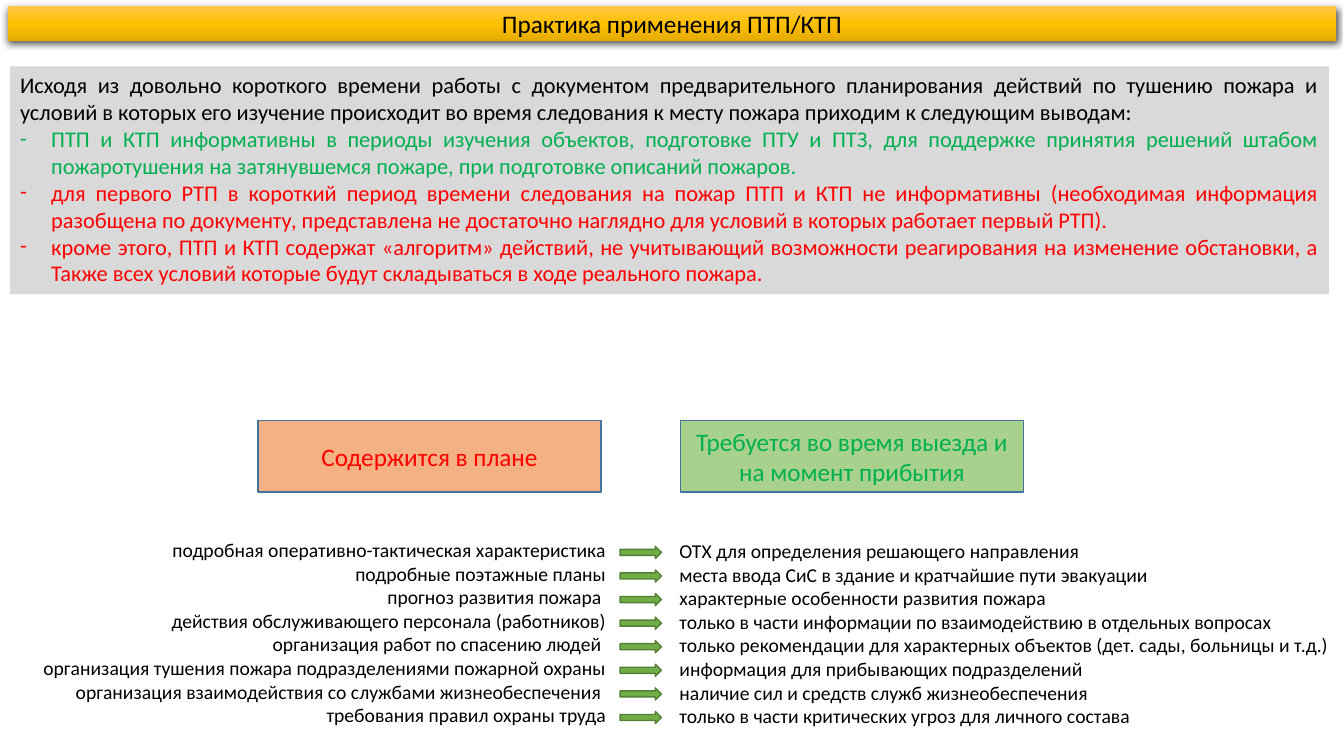
from pptx import Presentation
from pptx.dml.color import RGBColor
from pptx.enum.shapes import MSO_SHAPE
from pptx.enum.text import MSO_ANCHOR, MSO_AUTO_SIZE, PP_ALIGN
from pptx.oxml import parse_xml
from pptx.oxml.ns import nsdecls
from pptx.util import Inches, Pt

TITLE = "Практика применения ПТП/КТП"
INTRO = ("Исходя из довольно короткого времени работы с документом предварительного "
         "планирования действий по тушению пожара и условий в которых его изучение "
         "происходит во время следования к месту пожара приходим к следующим выводам: ")
POINTS = [
    ("good", "ПТП и КТП информативны в периоды изучения объектов, подготовке ПТУ и ПТЗ, "
             "для поддержке принятия решений штабом пожаротушения на затянувшемся пожаре, "
             "при подготовке описаний пожаров."),
    ("bad", "для первого РТП в короткий период времени следования на пожар ПТП и КТП не "
            "информативны (необходимая информация разобщена по документу, представлена не "
            "достаточно наглядно для условий в которых работает первый РТП)."),
    ("bad", "кроме этого, ПТП и КТП содержат «алгоритм» действий, не учитывающий "
            "возможности реагирования на изменение обстановки, а Также всех условий "
            "которые будут складываться в ходе реального пожара."),
]
HEADS = [
    ("Содержится в плане", 2.56, "peach", "bad"),
    ("Требуется во время выезда и на момент прибытия", 6.75, "mint", "good"),
]
PAIRS = [
    ("подробная оперативно-тактическая характеристика",
     "ОТХ для определения решающего направления"),
    ("подробные поэтажные планы",
     "места ввода СиС в здание и кратчайшие пути эвакуации"),
    ("прогноз развития пожара ",
     "характерные особенности развития пожара"),
    ("действия обслуживающего персонала (работников)",
     "только в части информации по взаимодействию в отдельных вопросах"),
    ("организация работ по спасению людей ",
     "только рекомендации для характерных объектов (дет. сады, больницы и т.д.)"),
    ("организация тушения пожара подразделениями пожарной охраны",
     "информация для прибывающих подразделений"),
    ("организация взаимодействия со службами жизнеобеспечения ",
     "наличие сил и средств служб жизнеобеспечения"),
    ("требования правил охраны труда",
     "только в части критических угроз для личного состава"),
]

THEME = {
    "font": "Calibri",
    "size": {"head": 18, "body": 16, "list": 14},
    "color": {"text": "000000", "good": "00B050", "bad": "FF0000", "panel": "D9D9D9",
              "peach": "F4B183", "mint": "A9D18E", "edge": "43739E",
              "arrow": "70AD47", "rim": "538035"},
    "bar": [(0, "FFC64B"), (50, "FFC000"), (100, "E3AB00")],
}
ARROW_TOP, ARROW_STEP = 5.42, 0.234


def tint(name):
    return RGBColor.from_string(THEME["color"][name])


def place(shape, box):
    for key, value in zip(("left", "top", "width", "height"), box):
        setattr(shape, key, Inches(value))


def write(shape, lines, size, align, anchor=MSO_ANCHOR.TOP):
    """Fill a shape with (colour name, text) paragraphs."""
    frame = shape.text_frame
    look = {"word_wrap": True, "auto_size": MSO_AUTO_SIZE.NONE,
            "vertical_anchor": anchor}
    for key, value in look.items():
        setattr(frame, key, value)
    for i, (color, text) in enumerate(lines):
        para = frame.paragraphs[0] if i == 0 else frame.add_paragraph()
        para.alignment = align
        run = para.add_run()
        run.text = text
        style = {"name": THEME["font"], "size": Pt(THEME["size"][size])}
        for key, value in style.items():
            setattr(run.font, key, value)
        run.font.color.rgb = tint(color)


def draw(slide, kind, box, fill, line=None):
    shape = slide.shapes.add_shape(kind, *map(Inches, box))
    shape.shadow.inherit = False
    shape.fill.solid()
    shape.fill.fore_color.rgb = tint(fill)
    if line:
        shape.line.color.rgb = tint(line)
        shape.line.width = Pt(1)
    else:
        shape.line.fill.background()
    return shape


def dash(para):
    """Give a paragraph a hanging dash bullet."""
    props = para._p.get_or_add_pPr()
    indent = Inches(0.31)
    props.set("marL", str(indent))
    props.set("indent", str(-indent))
    for tag in (f'<a:buFont {nsdecls("a")} typeface="{THEME["font"]}"/>',
                f'<a:buChar {nsdecls("a")} char="-"/>'):
        props.append(parse_xml(tag))


def gild(shape):
    """Add the vertical gradient and the soft shadow of the title bar."""
    stops = "".join(f'<a:gs pos="{pos * 1000}"><a:srgbClr val="{color}"/></a:gs>'
                    for pos, color in THEME["bar"])
    parts = [
        f'<a:prstGeom {nsdecls("a")} prst="rect"><a:avLst/></a:prstGeom>',
        f'<a:gradFill {nsdecls("a")}><a:gsLst>{stops}</a:gsLst>'
        '<a:lin ang="5400000" scaled="0"/></a:gradFill>',
        f'<a:effectLst {nsdecls("a")}><a:outerShdw blurRad="{Pt(4.5)}" dist="{Pt(1.5)}" '
        'dir="5400000" algn="ctr" rotWithShape="0"><a:srgbClr val="000000">'
        '<a:alpha val="63000"/></a:srgbClr></a:outerShdw></a:effectLst>',
    ]
    for part in parts:
        shape._element.spPr.append(parse_xml(part))


def main():
    deck = Presentation()
    deck.slide_width, deck.slide_height = Inches(13.33), Inches(7.5)
    slide = deck.slides.add_slide(deck.slide_layouts[5])

    title = slide.shapes.title
    place(title, (0.08, 0.06, 13.17, 0.35))
    gild(title)
    write(title, [("text", TITLE)], "head", PP_ALIGN.CENTER, MSO_ANCHOR.MIDDLE)

    panel = draw(slide, MSO_SHAPE.RECTANGLE, (0.1, 0.66, 13.08, 2.26), "panel")
    write(panel, [("text", INTRO), *POINTS], "body", PP_ALIGN.JUSTIFY)
    for para in panel.text_frame.paragraphs[1:]:
        dash(para)

    for text, left, fill, color in HEADS:
        head = draw(slide, MSO_SHAPE.RECTANGLE, (left, 4.17, 3.4, 0.71), fill, "edge")
        write(head, [(color, text)], "head", PP_ALIGN.CENTER, MSO_ANCHOR.MIDDLE)

    plans, needs = zip(*PAIRS)
    columns = [(plans, (0.26, 5.29, 5.85, 1.99), PP_ALIGN.RIGHT),
               (needs, (6.64, 5.3, 6.69, 1.99), PP_ALIGN.LEFT)]
    for texts, box, align in columns:
        area = slide.shapes.add_textbox(*map(Inches, box))
        write(area, [("text", text) for text in texts], "list", align)

    for row in range(len(PAIRS)):
        top = ARROW_TOP + row * ARROW_STEP
        draw(slide, MSO_SHAPE.RIGHT_ARROW, (6.15, top, 0.41, 0.12), "arrow", "rim")

    deck.save("out.pptx")


if __name__ == "__main__":
    main()
